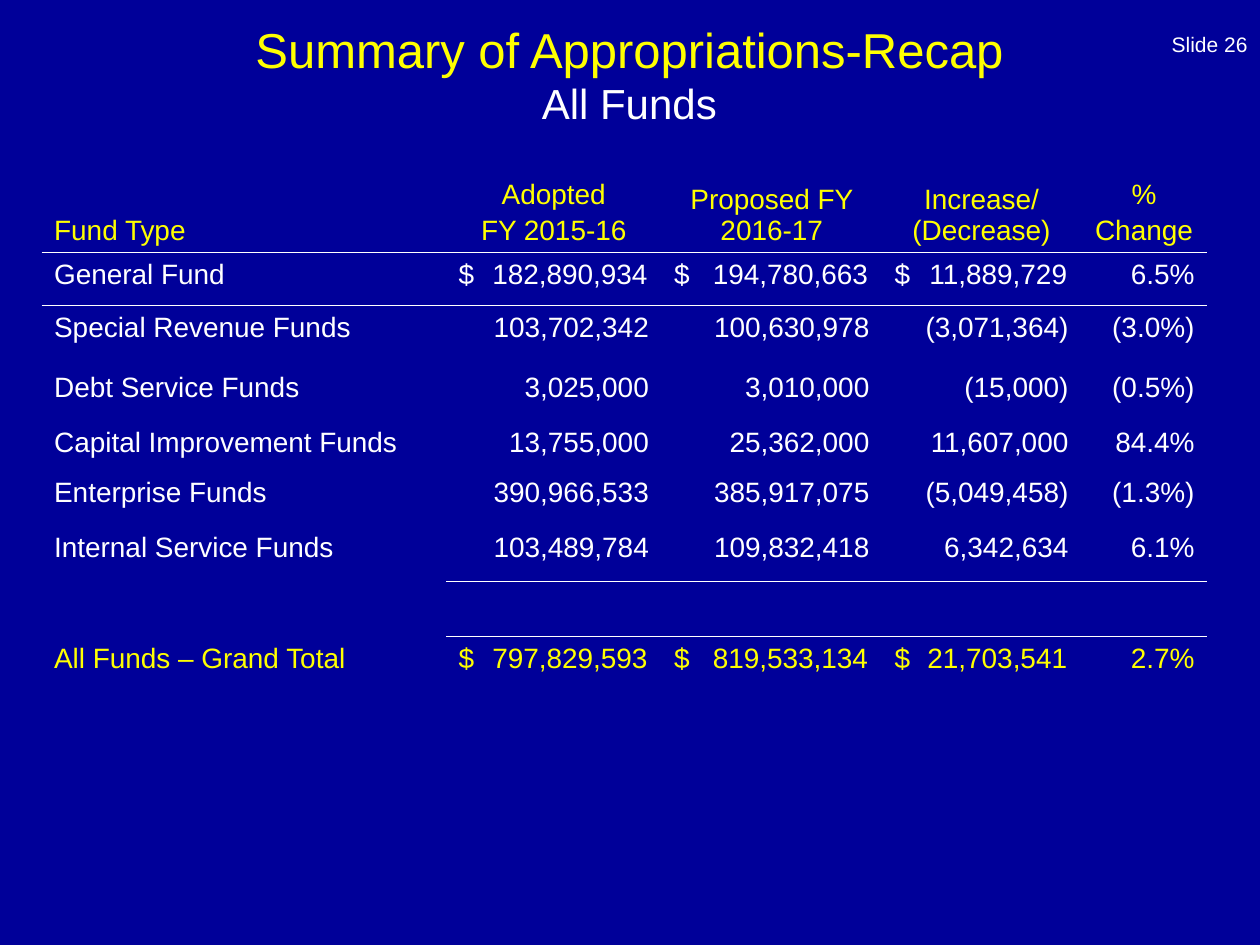
from lxml.etree import SubElement
from pptx import Presentation
from pptx.dml.color import RGBColor
from pptx.enum.text import MSO_ANCHOR, MSO_AUTO_SIZE, PP_ALIGN
from pptx.oxml.ns import qn
from pptx.util import Inches, Pt

NAVY = RGBColor(0x00, 0x00, 0x99)
YELLOW = RGBColor(0xFF, 0xFF, 0x00)
WHITE = RGBColor(0xFF, 0xFF, 0xFF)
FONT = "Arial"
PLAIN_TABLE_STYLE = "{2D5ABB26-0587-4C30-8999-92F81FD0307C}"

# Content: a tab sets the dollar sign apart from its amount
TITLE = "Summary of Appropriations-Recap"
SUBTITLE = "All Funds"
SLIDE_LABEL = "Slide 26"
ROWS = [
    ("Fund Type", "Adopted\nFY 2015-16", "Proposed FY 2016-17",
     "Increase/ (Decrease)", "%\nChange"),
    ("General Fund", "$\t182,890,934", "$\t194,780,663", "$\t11,889,729", "6.5%"),
    ("Special Revenue Funds", "103,702,342", "100,630,978", "(3,071,364)", "(3.0%)"),
    ("Debt Service Funds", "3,025,000", "3,010,000", "(15,000)", "(0.5%)"),
    ("Capital Improvement Funds", "13,755,000", "25,362,000", "11,607,000", "84.4%"),
    ("Enterprise Funds", "390,966,533", "385,917,075", "(5,049,458)", "(1.3%)"),
    ("Internal Service Funds", "103,489,784", "109,832,418", "6,342,634", "6.1%"),
    ("", "", "", "", ""),
    ("All Funds – Grand Total", "$\t797,829,593", "$\t819,533,134",
     "$\t21,703,541", "2.7%"),
]
COLUMN_WIDTHS = [3.21, 1.71, 1.75, 1.58, 1.0]
ROW_HEIGHTS = [0.64, 0.42, 0.48, 0.44, 0.39, 0.44, 0.44, 0.44, 0.44]
HEADER_ROW, LAST_FUND_ROW, TOTAL_ROW = 0, 6, 8
CELL_MARGIN = 0.1


def style_font(font, size, color):
    font.name = FONT
    font.size = Pt(size)
    font.color.rgb = color


def add_border(cell, side):
    line = SubElement(cell._tc.get_or_add_tcPr(), qn(f"a:ln{side}"), w=str(Pt(1)))
    fill = SubElement(line, qn("a:solidFill"))
    SubElement(fill, qn("a:srgbClr"), val=str(WHITE))


def add_right_tab(paragraph, position):
    tabs = SubElement(paragraph._p.get_or_add_pPr(), qn("a:tabLst"))
    SubElement(tabs, qn("a:tab"), pos=str(Inches(position)), algn="r")


def fill_cell(cell, text, row, column):
    # Rules under the header and above the total
    if row == HEADER_ROW or (row == LAST_FUND_ROW and column > 0):
        add_border(cell, "B")
    if row == HEADER_ROW + 1 or (row == LAST_FUND_ROW + 1 and column > 0):
        add_border(cell, "T")
    cell.fill.background()
    cell.vertical_anchor = MSO_ANCHOR.BOTTOM if row == HEADER_ROW else MSO_ANCHOR.TOP
    cell.text_frame.text = text

    color = YELLOW if row in (HEADER_ROW, TOTAL_ROW) else WHITE
    for index, paragraph in enumerate(cell.text_frame.paragraphs):
        if index > 0:
            paragraph.space_before = Pt(3)
        if "\t" in text:
            paragraph.alignment = PP_ALIGN.LEFT
            add_right_tab(paragraph, COLUMN_WIDTHS[column] - 2 * CELL_MARGIN - 0.01)
        elif column == 0:
            paragraph.alignment = PP_ALIGN.LEFT
        else:
            paragraph.alignment = PP_ALIGN.CENTER if row == HEADER_ROW else PP_ALIGN.RIGHT
        for run in paragraph.runs:
            style_font(run.font, 16, color)


def main():
    presentation = Presentation()
    presentation.slide_width = Inches(10)
    presentation.slide_height = Inches(7.5)
    slide = presentation.slides.add_slide(presentation.slide_layouts[5])
    slide.background.fill.solid()
    slide.background.fill.fore_color.rgb = NAVY

    # Title and subtitle
    title = slide.shapes.title
    title.left, title.top = Inches(0.33), Inches(0.25)
    title.width, title.height = Inches(9.33), Inches(0.67)
    frame = title.text_frame
    frame.text = f"{TITLE}\v{SUBTITLE}"
    frame.auto_size = MSO_AUTO_SIZE.NONE
    frame.vertical_anchor = MSO_ANCHOR.MIDDLE
    paragraph = frame.paragraphs[0]
    paragraph.alignment = PP_ALIGN.CENTER
    for run, size, color in zip(paragraph.runs, (28, 24), (YELLOW, WHITE)):
        style_font(run.font, size, color)

    # Slide label
    label = slide.shapes.add_textbox(Inches(7.67), Inches(0), Inches(2.33), Inches(0.5))
    label.text_frame.word_wrap = True
    label.text_frame.vertical_anchor = MSO_ANCHOR.BOTTOM
    label.text_frame.text = SLIDE_LABEL
    paragraph = label.text_frame.paragraphs[0]
    paragraph.alignment = PP_ALIGN.RIGHT
    style_font(paragraph.runs[0].font, 12, WHITE)

    # Appropriations table
    table = slide.shapes.add_table(
        len(ROWS), len(COLUMN_WIDTHS), Inches(0.33), Inches(1.33),
        Inches(sum(COLUMN_WIDTHS)), Inches(sum(ROW_HEIGHTS))).table
    table.first_row = False
    table.horz_banding = False
    table._tbl.tblPr.find(qn("a:tableStyleId")).text = PLAIN_TABLE_STYLE
    for column, width in zip(table.columns, COLUMN_WIDTHS):
        column.width = Inches(width)
    for row, height in zip(table.rows, ROW_HEIGHTS):
        row.height = Inches(height)
    for row, texts in enumerate(ROWS):
        for column, text in enumerate(texts):
            fill_cell(table.cell(row, column), text, row, column)

    presentation.save("out.pptx")


if __name__ == "__main__":
    main()
